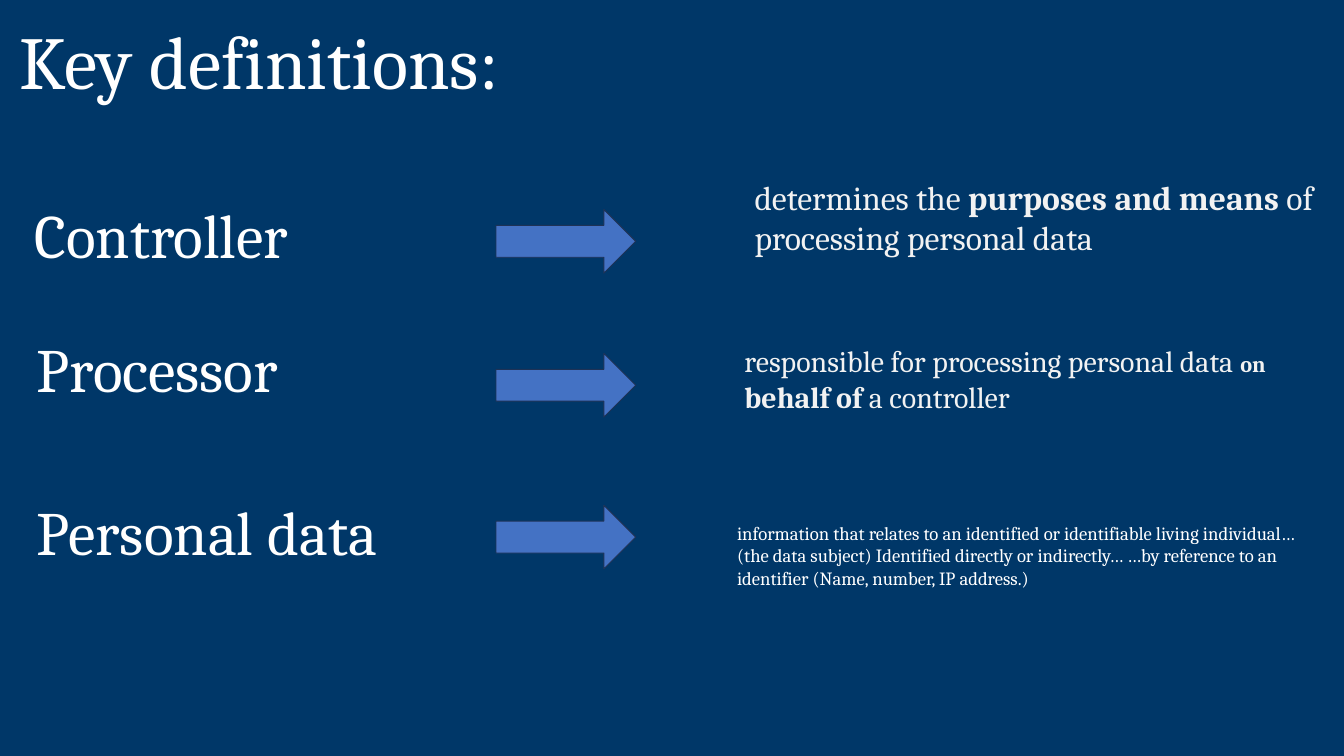
from dataclasses import dataclass

from pptx import Presentation
from pptx.dml.color import RGBColor
from pptx.enum.shapes import MSO_SHAPE
from pptx.enum.text import MSO_ANCHOR, PP_ALIGN
from pptx.slide import Slide
from pptx.util import Cm, Pt

NAVY = "003768"
WHITE = "FFFFFF"
PALE = "F2F2F2"
ARROW_BLUE = "4472C4"
ARROW_EDGE = "1E3256"
FONT = "Cambria"
TERM_SIZE = 66
TERM_HEIGHT = 3.07
TEXT_WIDTH = 22.53
ARROW_LEFT, ARROW_WIDTH, ARROW_HEIGHT = 18.75, 5.28, 2.41


@dataclass(frozen=True)
class Area:
    left: float
    top: float
    width: float
    height: float

    def lengths(self) -> list[Cm]:
        return [Cm(value) for value in (self.left, self.top, self.width, self.height)]


@dataclass(frozen=True)
class Span:
    text: str
    size: float
    color: str = WHITE
    bold: bool = False


@dataclass(frozen=True)
class Definition:
    term: str
    term_area: Area
    arrow_top: float
    meaning: tuple[Span, ...]
    meaning_area: Area


TITLE = Span("Key definitions:", 80)
TITLE_AREA = Area(0.48, 0.43, TEXT_WIDTH, 3.68)

DEFINITIONS = (
    Definition(
        "Controller",
        Area(1.04, 7.32, 15.62, TERM_HEIGHT),
        7.92,
        (
            Span("determines the ", 36, PALE),
            Span("purposes and means ", 36, PALE, True),
            Span("of processing personal data", 36, PALE),
        ),
        Area(28.27, 6.55, TEXT_WIDTH, 3.33),
    ),
    Definition(
        "Processor",
        Area(1.14, 12.37, 15.19, TERM_HEIGHT),
        13.36,
        (
            Span("responsible for processing personal data ", 32, PALE),
            Span("on", 24, PALE, True),
            Span(" behalf of ", 32, PALE, True),
            Span("a controller", 32, PALE),
        ),
        Area(27.89, 12.8, TEXT_WIDTH, 3),
    ),
    Definition(
        "Personal data",
        Area(1.14, 18.52, 18.19, TERM_HEIGHT),
        19.1,
        (
            Span(
                "information that relates to an identified or identifiable living "
                "individual… (the data subject) Identified directly or indirectly… "
                "…by reference to an identifier (Name, number, IP address.)",
                20,
            ),
        ),
        Area(27.61, 19.58, TEXT_WIDTH, 2.82),
    ),
)


def color(value: str) -> RGBColor:
    return RGBColor.from_string(value)


def apply_format(target: object, values: dict[str, object]) -> None:
    for name, value in values.items():
        setattr(target, name, value)


def add_text(page: Slide, area: Area, spans: tuple[Span, ...]) -> None:
    box = page.shapes.add_textbox(*area.lengths())
    apply_format(
        box.text_frame,
        {"word_wrap": True, "vertical_anchor": MSO_ANCHOR.MIDDLE},
    )
    para = box.text_frame.paragraphs[0]
    apply_format(para, {"space_before": Pt(15), "alignment": PP_ALIGN.LEFT})
    for span in spans:
        run = para.add_run()
        run.text = span.text
        apply_format(
            run.font, {"name": FONT, "size": Pt(span.size), "bold": span.bold}
        )
        run.font.color.rgb = color(span.color)


def add_arrow(page: Slide, area: Area) -> None:
    arrow = page.shapes.add_shape(MSO_SHAPE.RIGHT_ARROW, *area.lengths())
    arrow.shadow.inherit = False
    arrow.fill.solid()
    arrow.fill.fore_color.rgb = color(ARROW_BLUE)
    arrow.line.color.rgb = color(ARROW_EDGE)
    arrow.line.width = Pt(1)


def add_definition(page: Slide, definition: Definition) -> None:
    add_text(page, definition.term_area, (Span(definition.term, TERM_SIZE),))
    add_arrow(
        page, Area(ARROW_LEFT, definition.arrow_top, ARROW_WIDTH, ARROW_HEIGHT)
    )
    add_text(page, definition.meaning_area, definition.meaning)


def main() -> None:
    deck = Presentation()
    apply_format(deck, {"slide_width": Cm(50.8), "slide_height": Cm(28.58)})
    page = deck.slides.add_slide(deck.slide_layouts[6])
    page.background.fill.solid()
    page.background.fill.fore_color.rgb = color(NAVY)
    add_text(page, TITLE_AREA, (TITLE,))
    for definition in DEFINITIONS:
        add_definition(page, definition)
    deck.save("out.pptx")


if __name__ == "__main__":
    main()
